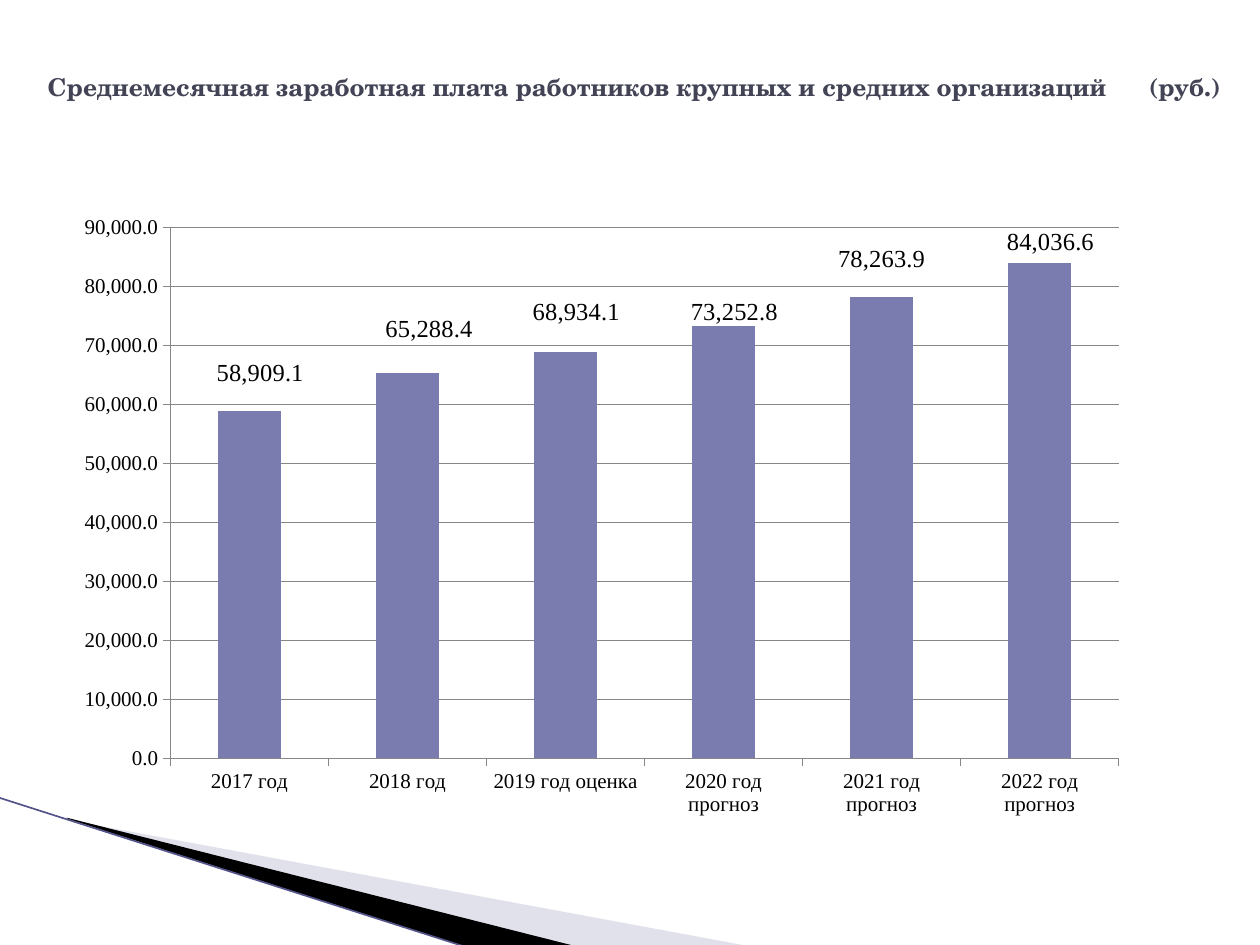
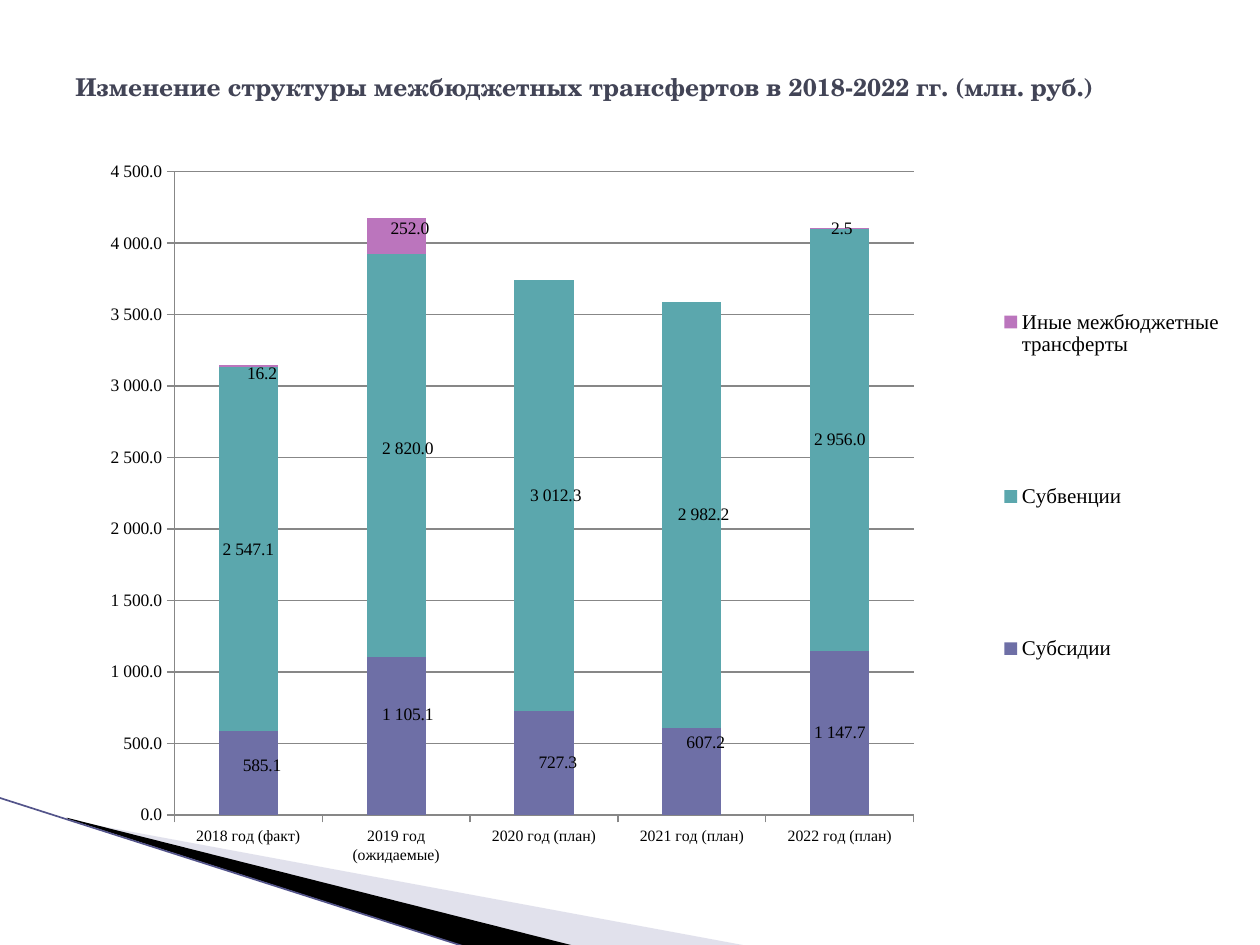
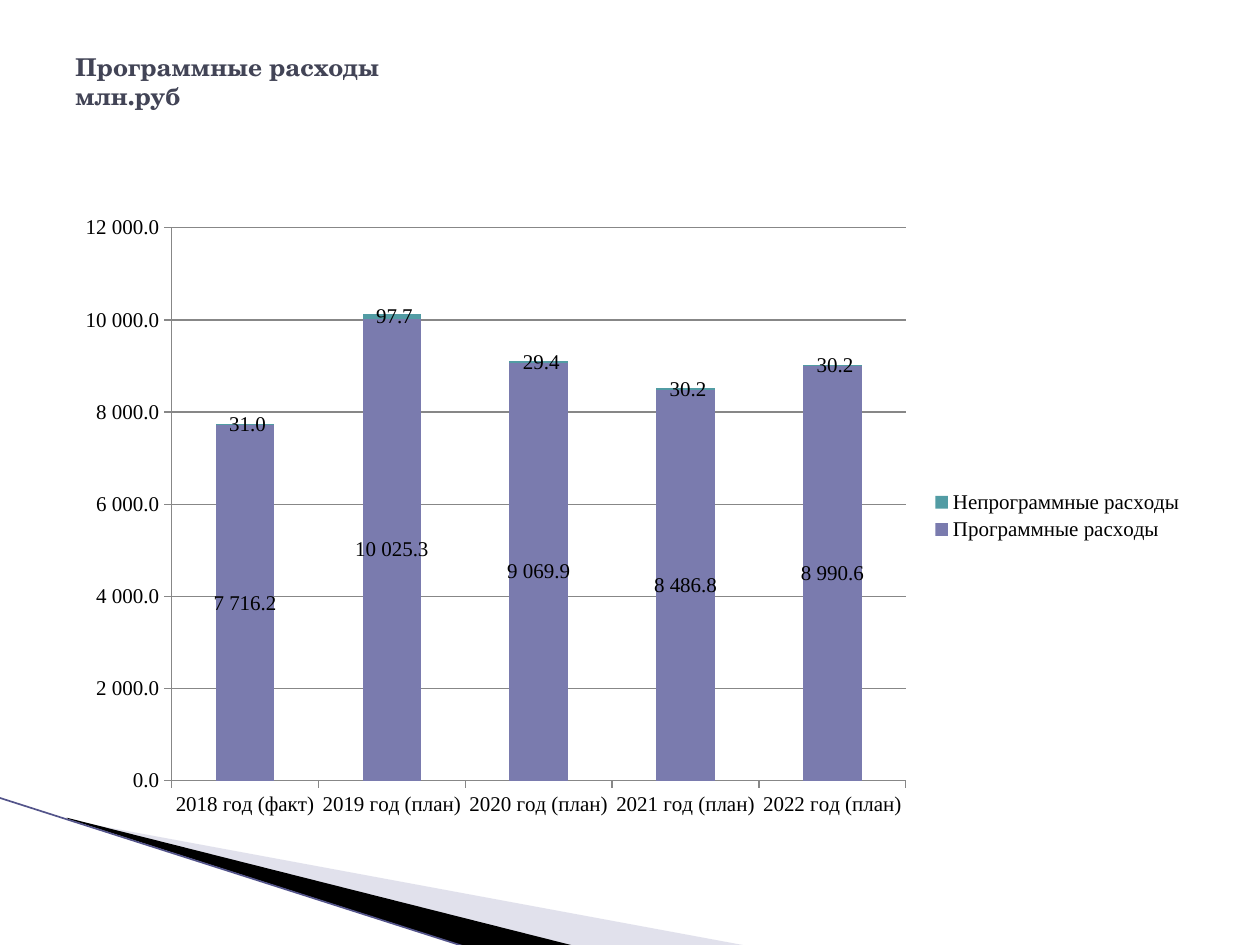
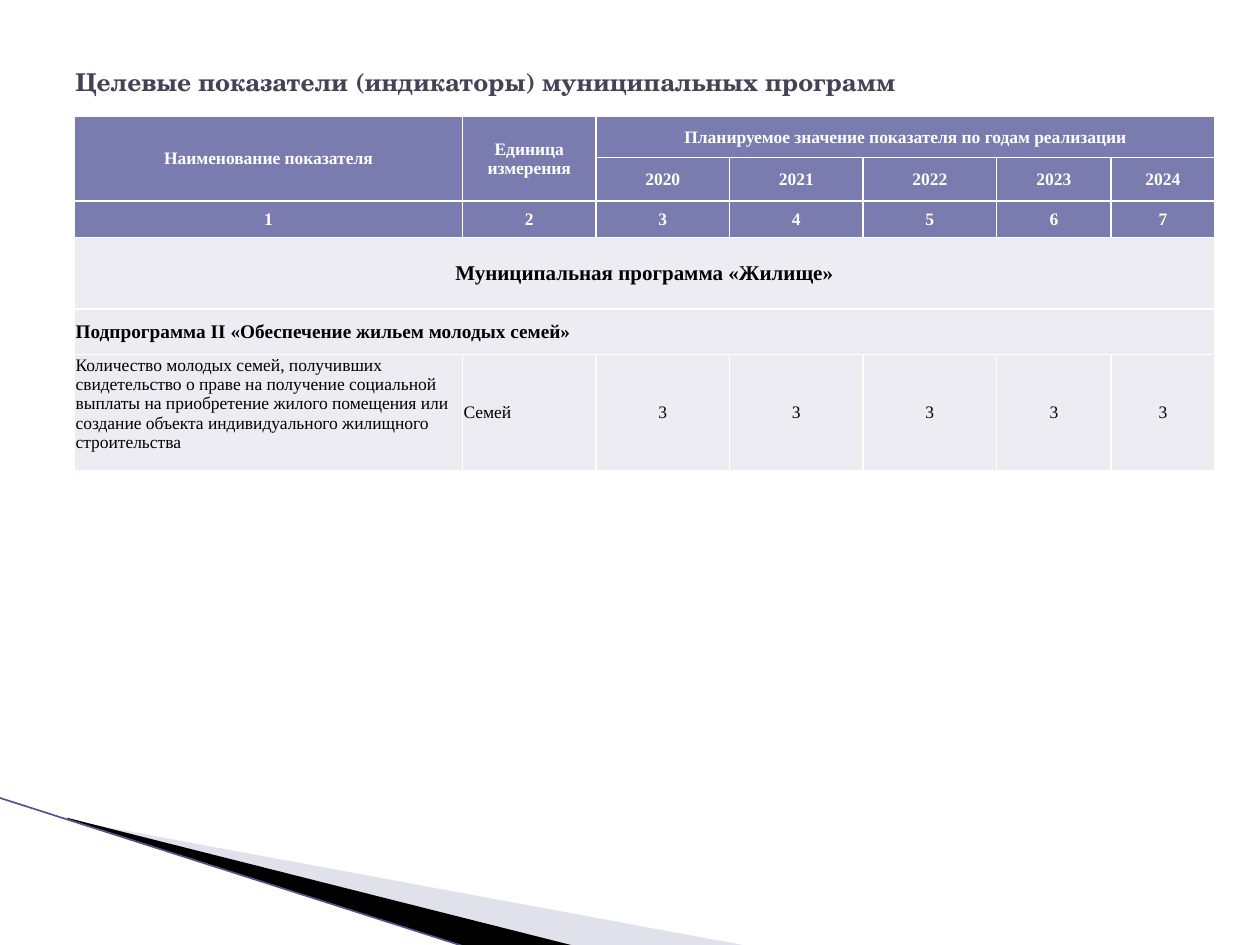
from copy import deepcopy

from lxml import etree
from pptx import Presentation
from pptx.chart.data import CategoryChartData
from pptx.dml.color import RGBColor
from pptx.enum.chart import XL_CHART_TYPE, XL_LEGEND_POSITION, XL_TICK_MARK
from pptx.enum.shapes import MSO_CONNECTOR
from pptx.enum.text import MSO_ANCHOR, PP_ALIGN
from pptx.oxml.ns import qn
from pptx.util import Inches, Pt

STACKED = XL_CHART_TYPE.COLUMN_STACKED
LEGEND_RIGHT = XL_LEGEND_POSITION.RIGHT
TICK_OUTSIDE = XL_TICK_MARK.OUTSIDE
TICK_NONE = XL_TICK_MARK.NONE
STRAIGHT = MSO_CONNECTOR.STRAIGHT
TOP, MIDDLE = MSO_ANCHOR.TOP, MSO_ANCHOR.MIDDLE
LEFT, CENTER, JUSTIFY = PP_ALIGN.LEFT, PP_ALIGN.CENTER, PP_ALIGN.JUSTIFY

TITLE_FONT = "TeX Gyre Schola"
BODY_FONT = "Times New Roman"
CHART_FONT = "DejaVu Sans Mono"
TITLE_COLOR = "424456"
BLACK, WHITE = "000000", "FFFFFF"
PURPLE, DEEP_PURPLE = "7A7BAE", "6E6FA6"
TEAL, LIGHT_TEAL, PINK = "529CA4", "5BA7AD", "BB75BD"
ROW_TINT = "ECECF2"
WEDGE_TINT = "B6B6D1"
EDGE_COLOR = "53548A"
GRID_COLOR = "878787"
COMMA_FORMAT = "#,##0.0"
SPACE_FORMAT = r"#\ ##0.0"


def rgb(hex_color):
    return RGBColor.from_string(hex_color)


def add_child(parent, tag, **attributes):
    return etree.SubElement(parent, qn(tag), attributes)


def set_font(font, size, color=BLACK, name=BODY_FONT, bold=False):
    font.name = name
    font.size = Pt(size)
    font.bold = bold
    font.color.rgb = rgb(color)


def write_text(frame, text, align=LEFT, tab=None, **font_format):
    """Fill a text frame with one paragraph, with an optional tab stop in inches."""
    frame.word_wrap = True
    paragraph = frame.paragraphs[0]
    paragraph.text = text
    paragraph.alignment = align
    if tab:
        tab_list = add_child(paragraph._p.get_or_add_pPr(), "a:tabLst")
        add_child(tab_list, "a:tab", pos=str(Inches(tab)), algn="l")
    for run in paragraph.runs:
        set_font(run.font, **font_format)


def add_wedge(slide, points, color, opacity=None):
    corners = [(Inches(x), Inches(y)) for x, y in points]
    builder = slide.shapes.build_freeform(*corners[0])
    builder.add_line_segments(corners[1:], close=True)
    wedge = builder.convert_to_shape()
    wedge.shadow.inherit = False
    wedge.line.fill.background()
    wedge.fill.solid()
    wedge.fill.fore_color.rgb = rgb(color)
    if opacity:
        color_element = wedge._element.spPr.find(".//" + qn("a:srgbClr"))
        add_child(color_element, "a:alpha", val=str(opacity * 1000))


def add_edge(slide, start, end):
    edge = slide.shapes.add_connector(STRAIGHT, *map(Inches, start + end))
    edge.line.color.rgb = rgb(EDGE_COLOR)
    edge.line.width = Pt(0.95)
    add_child(edge._element.spPr, "a:effectLst")


def add_slide(presentation, title, left=0.5, width=9, height=0.69, tab=None):
    """Add a slide with the corner wedges and a title."""
    slide = presentation.slides.add_slide(presentation.slide_layouts[6])
    add_wedge(slide, [(0.55, 6.51), (5.95, 7.51), (4.56, 7.51), (0.55, 6.5)], WEDGE_TINT, 40)
    add_wedge(slide, [(0.53, 6.49), (4.57, 7.51), (3.72, 7.52), (0.54, 6.5)], BLACK)
    add_edge(slide, (-0.01, 6.33), (3.71, 7.52))
    box = slide.shapes.add_textbox(Inches(left), Inches(0.3), Inches(width), Inches(height))
    box.text_frame.vertical_anchor = MIDDLE
    write_text(box.text_frame, title, tab=tab, size=14, color=TITLE_COLOR,
               name=TITLE_FONT, bold=True)
    return slide


def add_layout(parent, **settings):
    """Append a manual layout; each setting becomes one element."""
    manual = add_child(add_child(parent, "c:layout"), "c:manualLayout")
    for name, value in settings.items():
        add_child(manual, f"c:{name}", val=str(value))
    return manual.getparent()


def hide_leader_lines(labels):
    group = labels._element
    leader_lines = group.find(qn("c:showLeaderLines"))
    if leader_lines is None:
        leader_lines = add_child(group, "c:showLeaderLines")
    leader_lines.set("val", "0")


def place_labels(labels, offsets):
    """Shift point labels by chart fractions; an offset of None removes the label."""
    group = labels._element
    shared = [child for child in group if child.tag != qn("c:showLeaderLines")]
    for position, (index, offset) in enumerate(offsets.items()):
        label = add_child(group, "c:dLbl")
        add_child(label, "c:idx", val=str(index))
        if offset is None:
            add_child(label, "c:delete", val="1")
        else:
            add_layout(label, x=offset[0], y=offset[1])
            label.extend(deepcopy(child) for child in shared)
        group.insert(position, label)


def style_series(series, color, size, number_format, offsets):
    series.format.fill.solid()
    series.format.fill.fore_color.rgb = rgb(color)
    labels = series.data_labels
    labels.show_value = True
    labels.number_format = number_format
    labels.number_format_is_linked = False
    set_font(labels.font, size)
    hide_leader_lines(labels)
    place_labels(labels, offsets)


def style_axis(axis, size):
    set_font(axis.tick_labels.font, size)
    axis.major_tick_mark = TICK_OUTSIDE
    axis.minor_tick_mark = TICK_NONE
    axis.format.line.color.rgb = rgb(GRID_COLOR)


def add_column_chart(slide, place, categories, series_list, top_value, step, number_format,
                     label_size=12, category_size=12, value_size=12, legend=True):
    """Add stacked columns; series_list holds (name, values, color, label offsets)."""
    data = CategoryChartData(number_format=number_format)
    data.categories = categories
    for name, values, _, _ in series_list:
        data.add_series(name, values)
    chart = slide.shapes.add_chart(STACKED, *map(Inches, place), data).chart
    chart.has_title = False
    set_font(chart.font, 18, name=CHART_FONT)

    plot = chart.plots[0]
    plot.gap_width, plot.overlap = 150, 100
    plot.vary_by_categories = False
    for series, (_, _, color, offsets) in zip(plot.series, series_list):
        style_series(series, color, label_size, number_format, offsets)

    style_axis(chart.category_axis, category_size)
    value_axis = chart.value_axis
    style_axis(value_axis, value_size)
    value_axis.minimum_scale, value_axis.maximum_scale = 0, top_value
    value_axis.major_unit = step
    value_axis.tick_labels.number_format = number_format
    value_axis.tick_labels.number_format_is_linked = False
    value_axis.major_gridlines.format.line.color.rgb = rgb(GRID_COLOR)

    chart.has_legend = legend
    if legend:
        chart.legend.position = LEGEND_RIGHT
        chart.legend.include_in_layout = False
        set_font(chart.legend.font, 12)
    return chart


def fix_layouts(chart, plot_box, legend_box):
    """Place the inner plot area and the legend by chart fractions."""
    plot_area = chart._chartSpace.chart.plotArea
    legend = chart.legend._element
    for parent in (plot_area, legend):
        for old_layout in parent.findall(qn("c:layout")):
            parent.remove(old_layout)
    plot_area.insert(0, add_layout(plot_area, layoutTarget="inner", xMode="edge", yMode="edge",
                                   **dict(zip("xywh", plot_box))))
    layout = add_layout(legend, xMode="edge", yMode="edge", **dict(zip("xywh", legend_box)))
    legend.find(qn("c:legendPos")).addnext(layout)


def style_cell(cell, fill):
    cell.margin_left = cell.margin_right = cell.margin_top = Inches(0.01)
    cell.margin_bottom = 0
    cell.vertical_anchor = MIDDLE
    properties = cell._tc.get_or_add_tcPr()
    for side in "LRTB":
        border = add_child(properties, f"a:ln{side}", w=str(Pt(1)))
        add_child(add_child(border, "a:solidFill"), "a:srgbClr", val=WHITE)
    cell.fill.solid()
    cell.fill.fore_color.rgb = rgb(fill)


def add_indicator_table(slide):
    widths = [3.08, 1.06, 1.06, 1.06, 1.06, 0.91, 0.82]
    heights = [0.33, 0.32, 0.29, 0.57, 0.36, 0.92]
    header_rows = 3
    rows = [
        ["Наименование показателя", "Единица измерения",
         "Планируемое значение показателя по годам реализации"],
        ["", "", *map(str, range(2020, 2025))],
        [str(number) for number in range(1, 8)],
        ["Муниципальная программа «Жилище»"],
        ["Подпрограмма II «Обеспечение жильем молодых семей»"],
        ["Количество молодых семей, получивших свидетельство о праве на получение социальной "
         "выплаты на приобретение жилого помещения или создание объекта индивидуального "
         "жилищного строительства", "Семей", *["3"] * 5],
    ]
    merges = [((0, 0), (1, 0)), ((0, 1), (1, 1)), ((0, 2), (0, 6)),
              ((3, 0), (3, 6)), ((4, 0), (4, 6))]
    sizes = {3: 12, 4: 11}
    alignments = {(4, 0): LEFT, (5, 0): LEFT, (5, 1): JUSTIFY}

    table = slide.shapes.add_table(len(heights), len(widths), Inches(0.59), Inches(0.92),
                                   Inches(sum(widths)), Inches(sum(heights))).table
    table.first_row = table.horz_banding = False
    for column, width in zip(table.columns, widths):
        column.width = Inches(width)
    for row, height in zip(table.rows, heights):
        row.height = Inches(height)
    for start, end in merges:
        table.cell(*start).merge(table.cell(*end))
    for row_index, texts in enumerate(rows):
        is_header = row_index < header_rows
        for column_index in range(len(widths)):
            cell = table.cell(row_index, column_index)
            style_cell(cell, PURPLE if is_header else ROW_TINT)
            if cell.is_spanned:
                # A small end mark keeps covered cells from stretching their row.
                add_child(cell.text_frame.paragraphs[0]._p, "a:endParaRPr", sz="1000")
                continue
            write_text(cell.text_frame, texts[column_index],
                       align=alignments.get((row_index, column_index), CENTER),
                       size=sizes.get(row_index, 10), color=WHITE if is_header else BLACK,
                       bold=row_index < 5)
    table.cell(5, 0).vertical_anchor = TOP


def add_salary_slide(presentation):
    slide = add_slide(
        presentation,
        "Среднемесячная заработная плата работников крупных и средних организаций\t(руб.)",
        left=0.28, width=9.53, height=0.77, tab=8.74)
    categories = ["2017 год", "2018 год", "2019 год оценка"]
    categories += [f"{year} год прогноз" for year in range(2020, 2023)]
    salaries = [58909.1, 65288.4, 68934.1, 73252.8, 78263.9, 84036.6]
    offsets = {0: (0.01, -0.34), 1: (0.02, -0.38), 2: (0.01, -0.39),
               3: (0.01, -0.37), 4: (0, -0.43), 5: (0.01, -0.43)}
    add_column_chart(slide, (0.5, 1.62, 8.55, 4.95), categories,
                     [("Series 1", salaries, PURPLE, offsets)],
                     90000, 10000, COMMA_FORMAT, label_size=14, legend=False)


def add_transfers_slide(presentation, plan_years):
    slide = add_slide(
        presentation,
        "Изменение структуры межбюджетных трансфертов в 2018-2022 гг. (млн. руб.)", height=0.77)
    series_list = [
        ("Субсидии", [585.1, 1105.1, 727.3, 607.2, 1147.7], DEEP_PURPLE,
         {0: (0.01, -0.01), 1: (0.01, -0.03), 2: (0.01, 0), 3: (0.01, -0.04)}),
        ("Субвенции", [2547.1, 2820, 3012.3, 2982.2, 2956], LIGHT_TEAL,
         {1: (0.01, -0.01), 2: (0.01, 0), 3: (0.01, 0)}),
        ("Иные межбюджетные трансферты", [16.2, 252, 0, 0, 2.5], PINK,
         {0: (0.01, 0.01), 1: (0.01, -0.01), 2: None, 3: None}),
    ]
    chart = add_column_chart(slide, (0.5, 1.15, 9.3, 5.75),
                             ["2018 год (факт)", "2019 год (ожидаемые)", *plan_years],
                             series_list, 4500, 500, SPACE_FORMAT,
                             label_size=10, category_size=9, value_size=10)
    fix_layouts(chart, (0.095, 0.037, 0.631, 0.888), (0.79, 0.05, 0.21, 0.84))


def add_expenses_slide(presentation, plan_years):
    slide = add_slide(presentation, "Программные расходы\vмлн.руб")
    series_list = [
        ("Программные расходы", [7716.2, 10025.3, 9069.9, 8486.8, 8990.6], PURPLE, {}),
        ("Непрограммные расходы", [31, 97.7, 29.4, 30.2, 30.2], TEAL, {}),
    ]
    add_column_chart(slide, (0.5, 1.62, 9, 4.95),
                     ["2018 год (факт)", "2019 год (план)", *plan_years],
                     series_list, 12000, 2000, SPACE_FORMAT)


def main():
    presentation = Presentation()
    presentation.slide_width = Inches(10)
    presentation.slide_height = Inches(7.5)
    plan_years = [f"{year} год (план)" for year in range(2020, 2023)]

    add_salary_slide(presentation)
    add_transfers_slide(presentation, plan_years)
    add_expenses_slide(presentation, plan_years)
    add_indicator_table(add_slide(
        presentation, "Целевые показатели (индикаторы) муниципальных программ"))
    presentation.save("out.pptx")


if __name__ == "__main__":
    main()
